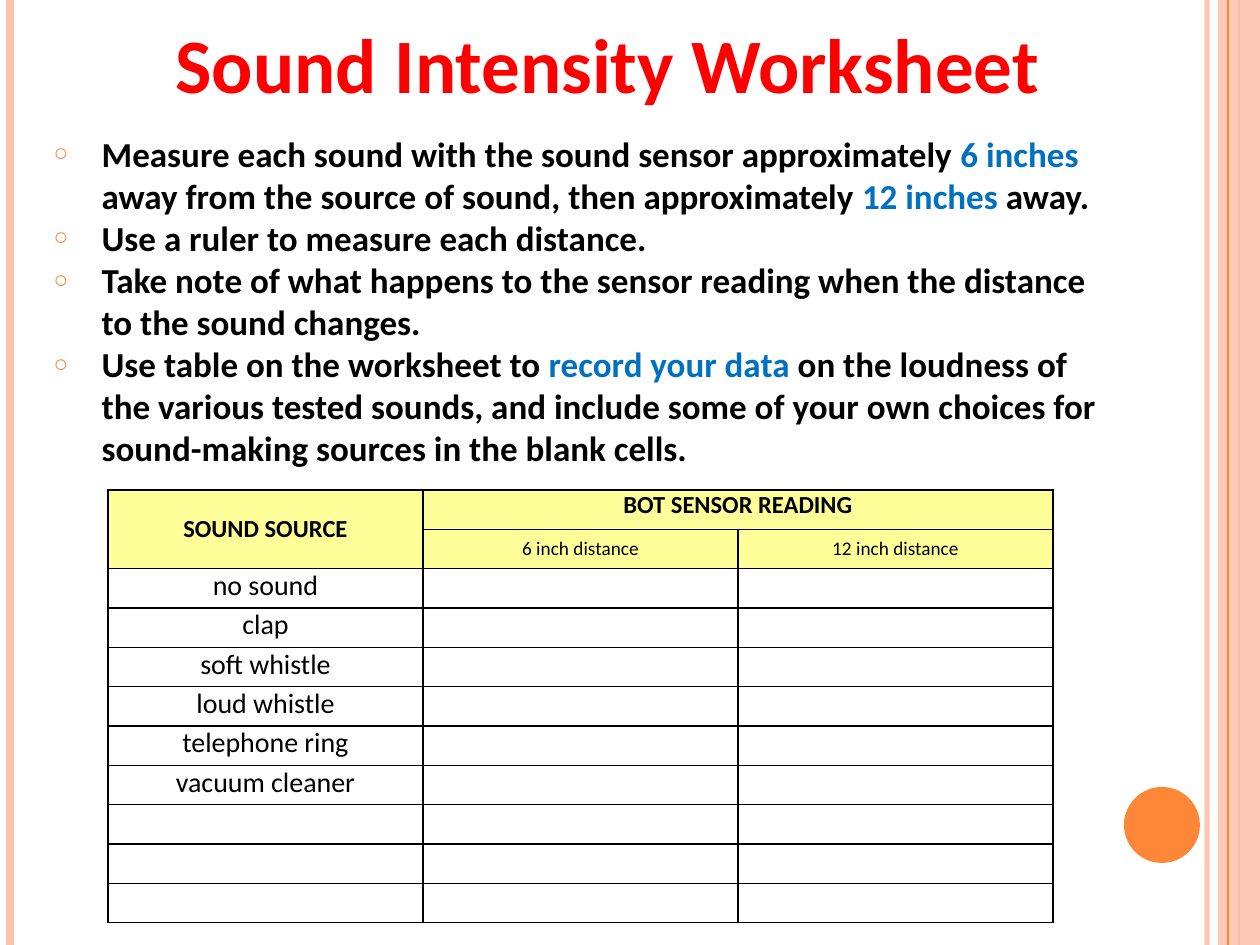
from lxml.etree import SubElement
from pptx import Presentation
from pptx.dml.color import RGBColor
from pptx.enum.shapes import MSO_CONNECTOR, MSO_SHAPE
from pptx.enum.text import MSO_ANCHOR, MSO_AUTO_SIZE, PP_ALIGN
from pptx.oxml import parse_xml
from pptx.oxml.ns import nsdecls, qn
from pptx.util import Emu, Pt

COLORS = {
    "title": "FF0000",
    "text": "000000",
    "accent": "0070C0",
    "orange": "FE8637",
    "peach": "FEC3AE",
    "header": "FFFF99",
}
FONT = "Calibri"
SLIDE_WIDTH, SLIDE_HEIGHT = 1260, 945

STRIPES = [
    (1207, "peach", 3, 93),
    (10, "peach", 4.5, 100),
    (1239, "orange", 1.5, 100),
]
INSTRUCTIONS = [
    [
        ("Measure each sound with the sound sensor approximately ", "text"),
        ("6 inches ", "accent"),
        ("away from the source of sound, then approximately ", "text"),
        ("12 inches ", "accent"),
        ("away.", "text"),
    ],
    [("Use a ruler to measure each distance.", "text")],
    [("Take note of what happens to the sensor reading when the distance "
      "to the sound changes.", "text")],
    [
        ("Use table on the worksheet to ", "text"),
        ("record your data ", "accent"),
        ("on the loudness of the various tested sounds, and include some of "
         "your own choices for sound-making sources in the blank cells.", "text"),
    ],
]
SOURCES = ["no sound", "clap", "soft whistle", "loud whistle",
           "telephone ring", "vacuum cleaner", "", "", ""]


def px(length):
    """Turn pixels into EMU."""
    return Emu(round(length * 914400 / 126))


class WorksheetSlide:
    """Holds the style and the current slide, with a method per element."""

    def __init__(self, slide):
        """Keep the slide to draw on."""
        self.slide = slide

    def place(self, shape, left, top, width, height):
        """Move and size a shape."""
        shape.left, shape.top = px(left), px(top)
        shape.width, shape.height = px(width), px(height)

    def style_run(self, run, size, color="text", bold=False):
        """Format one run."""
        run.font.name = FONT
        run.font.size = Pt(size)
        run.font.bold = bold
        run.font.color.rgb = RGBColor.from_string(COLORS[color])

    def set_opacity(self, shape, percent):
        """Set the opacity of the first colour of a shape."""
        color = next(shape._element.spPr.iter(qn("a:srgbClr")))
        SubElement(color, qn("a:alpha"), val=str(percent * 1000))

    def stripe(self, x, color, width, opacity=100):
        """Draw a vertical line over the full slide height."""
        line = self.slide.shapes.add_connector(
            MSO_CONNECTOR.STRAIGHT, px(x), 0, px(x), px(SLIDE_HEIGHT))
        line.line.color.rgb = RGBColor.from_string(COLORS[color])
        line.line.width = Pt(width)
        if opacity < 100:
            self.set_opacity(line, opacity)
        SubElement(line._element.spPr, qn("a:effectLst"))

    def block(self, kind, left, top, width, height, color, opacity=100):
        """Draw a filled shape without an outline."""
        shape = self.slide.shapes.add_shape(
            kind, px(left), px(top), px(width), px(height))
        shape.shadow.inherit = False
        shape.fill.solid()
        shape.fill.fore_color.rgb = RGBColor.from_string(COLORS[color])
        shape.line.fill.background()
        if opacity < 100:
            self.set_opacity(shape, opacity)

    def title(self, text, left, top, width, height):
        """Fill the title placeholder."""
        shape = self.slide.shapes.title
        self.place(shape, left, top, width, height)
        frame = shape.text_frame
        frame.text = text
        frame.auto_size = MSO_AUTO_SIZE.NONE
        frame.vertical_anchor = MSO_ANCHOR.BOTTOM
        paragraph = frame.paragraphs[0]
        paragraph.alignment = PP_ALIGN.CENTER
        self.style_run(paragraph.runs[0], 44, "title", True)

    def bullet(self, paragraph):
        """Give a paragraph a hanging circle bullet."""
        properties = paragraph._p.get_or_add_pPr()
        properties.set("marL", str(px(48)))
        properties.set("indent", str(-px(48)))
        color = SubElement(properties, qn("a:buClr"))
        SubElement(color, qn("a:srgbClr"), val=COLORS["orange"])
        SubElement(properties, qn("a:buSzPct"), val="70000")
        SubElement(properties, qn("a:buChar"), char="○")

    def bullets(self, items, left, top, width, height):
        """Fill the body placeholder with a bulleted list."""
        shape = self.slide.placeholders[1]
        self.place(shape, left, top, width, height)
        frame = shape.text_frame
        frame.auto_size = MSO_AUTO_SIZE.NONE
        frame.vertical_anchor = MSO_ANCHOR.MIDDLE
        for index, parts in enumerate(items):
            paragraph = frame.add_paragraph() if index else frame.paragraphs[0]
            paragraph.space_before = Pt(0)
            self.bullet(paragraph)
            for text, color in parts:
                run = paragraph.add_run()
                run.text = text
                self.style_run(run, 20, color, True)

    def border(self, cell):
        """Draw a thin line on all four sides of a cell."""
        properties = cell._tc.get_or_add_tcPr()
        for side in ("lnL", "lnR", "lnT", "lnB"):
            properties.append(parse_xml(
                f'<a:{side} {nsdecls("a")} w="12700"><a:solidFill>'
                f'<a:srgbClr val="{COLORS["text"]}"/></a:solidFill></a:{side}>'))

    def cell_text(self, cell, text, size, bold=False, anchor=MSO_ANCHOR.TOP):
        """Write centred text in a cell."""
        cell.text_frame.text = text
        cell.vertical_anchor = anchor
        paragraph = cell.text_frame.paragraphs[0]
        paragraph.alignment = PP_ALIGN.CENTER
        for run in paragraph.runs:
            self.style_run(run, size, bold=bold)

    def table(self, sources, left, top, width, height):
        """Draw the recording table with a two-row header."""
        table = self.slide.shapes.add_table(
            len(sources) + 2, 3, px(left), px(top), px(width), px(height)).table
        table.first_row = table.horz_banding = False
        for row_index, row in enumerate(table.rows):
            for cell in row.cells:
                cell.margin_left = cell.margin_right = px(9)
                cell.margin_top = cell.margin_bottom = 0
                self.border(cell)
                if row_index < 2:
                    cell.fill.solid()
                    cell.fill.fore_color.rgb = RGBColor.from_string(COLORS["header"])
                else:
                    cell.fill.background()
        table.cell(0, 0).merge(table.cell(1, 0))
        table.cell(0, 1).merge(table.cell(0, 2))
        self.cell_text(table.cell(0, 0), "SOUND SOURCE", 14, True, MSO_ANCHOR.MIDDLE)
        self.cell_text(table.cell(0, 1), "BOT SENSOR READING", 14, True)
        for column, inches in enumerate((6, 12), start=1):
            self.cell_text(table.cell(1, column), f"{inches} inch distance", 11,
                           anchor=MSO_ANCHOR.MIDDLE)
        for row_index, source in enumerate(sources, start=2):
            self.cell_text(table.cell(row_index, 0), source, 16)


def main():
    """Build the worksheet slide and save it."""
    presentation = Presentation()
    presentation.slide_width = px(SLIDE_WIDTH)
    presentation.slide_height = px(SLIDE_HEIGHT)
    layout = presentation.slide_layouts[1]
    worksheet = WorksheetSlide(presentation.slides.add_slide(layout))
    for stripe in STRIPES:
        worksheet.stripe(*stripe)
    worksheet.block(MSO_SHAPE.RECTANGLE, 1218, 0, 42, SLIDE_HEIGHT, "peach", 87)
    worksheet.stripe(1228, "orange", 0.75)
    worksheet.block(MSO_SHAPE.OVAL, 1124, 787, 76, 76, "orange")
    worksheet.title("Sound Intensity Worksheet", 41, 42, 1134, 73)
    worksheet.table(SOURCES, 108, 490, 945, 433)
    worksheet.bullets(INSTRUCTIONS, 41, 125, 1079, 351)
    presentation.save("out.pptx")


if __name__ == "__main__":
    main()
